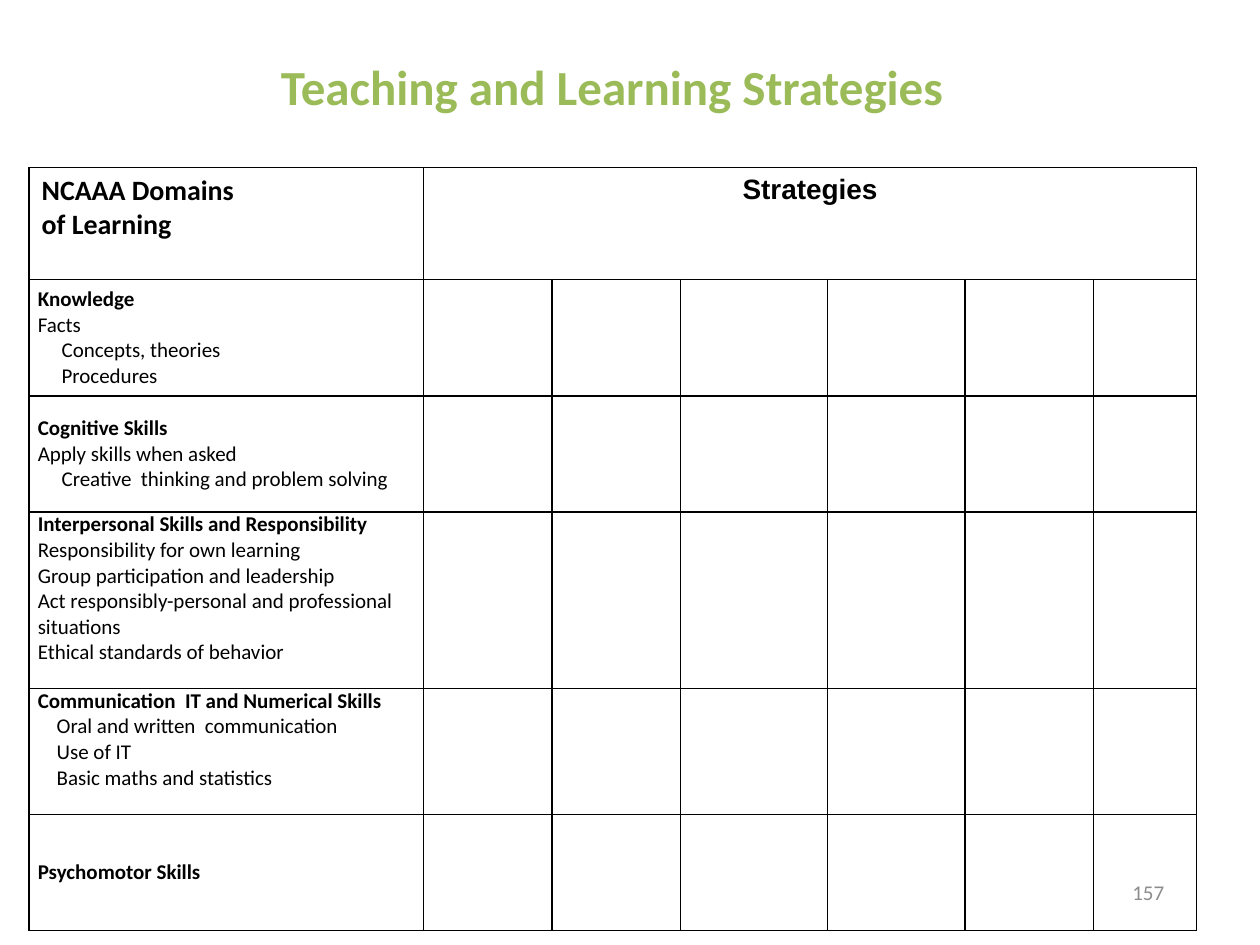
from lxml import etree
from pptx import Presentation
from pptx.dml.color import RGBColor
from pptx.enum import text as t
from pptx.oxml.ns import qn
from pptx.util import Pt

TITLE = "Teaching and Learning Strategies"
PAGE = "157"
HEADS = (["NCAAA Domains", "of Learning"], ["Strategies"])
TOP, MID = t.MSO_ANCHOR.TOP, t.MSO_ANCHOR.MIDDLE
ROWS = [
    ("Knowledge", MID, 66.4,
     [("Facts", 0), ("Concepts, theories", 13.6), ("Procedures", 13.6)]),
    ("Cognitive Skills", MID, 66.4,
     [("Apply skills when asked", 0),
      ("Creative  thinking and problem solving", 13.6)]),
    ("Interpersonal Skills and Responsibility", TOP, 100.8,
     [("Responsibility for own learning", 0),
      ("Group participation and leadership", 0),
      ("Act responsibly-personal and professional situations", 0),
      ("Ethical standards of behavior", 0)]),
    ("Communication  IT and Numerical Skills", TOP, 72,
     [("Oral and written  communication", 10.8), ("Use of IT", 10.8),
      ("Basic maths and statistics", 10.8)]),
    ("Psychomotor Skills", MID, 66.4, []),
]
HEAD = 64
COLS = [225.4, 73.4, 73.4, 84.2, 78.5, 73.4, 59]
THEME = {"green": "9BBB59", "black": "000000", "gray": "8C8C8C",
         "title": 28, "head": 16, "body": 12,
         "main": "Calibri", "alt": "Arial"}


def write(frame, lines, size="body", font="main", color="black", bold=False,
          align=t.PP_ALIGN.LEFT):
    for i, line in enumerate(lines):
        words, pad, heavy = line if isinstance(line, tuple) else (line, 0, bold)
        para = frame.paragraphs[0] if i == 0 else frame.add_paragraph()
        para.alignment = align
        if pad:
            para._p.get_or_add_pPr().set("marL", str(Pt(pad)))
        run = para.add_run()
        run.text = words
        run.font.size = Pt(THEME[size])
        run.font.name = THEME[font]
        run.font.bold = heavy
        run.font.color.rgb = RGBColor.from_string(THEME[color])


def label(slide, words, box, **style):
    frame = slide.shapes.add_textbox(*map(Pt, box)).text_frame
    frame.word_wrap = True
    frame.vertical_anchor = MID
    write(frame, [words], **style)


def border(cell):
    props = cell._tc.get_or_add_tcPr()
    for i, side in enumerate("LRTB"):
        line = etree.Element(qn("a:ln" + side), w=str(Pt(1)))
        fill = etree.SubElement(line, qn("a:solidFill"))
        etree.SubElement(fill, qn("a:srgbClr"), val=THEME["black"])
        props.insert(i, line)


def inset(cell, side, edge):
    cell.margin_left = cell.margin_right = Pt(side)
    cell.margin_top = cell.margin_bottom = Pt(edge)


def grid(slide):
    highs = [HEAD] + [row[2] for row in ROWS]
    box = (16.6, 95.8, sum(COLS), sum(highs))
    table = slide.shapes.add_table(len(highs), len(COLS), *map(Pt, box)).table
    table.first_row = table.horz_banding = False
    for col, wide in zip(table.columns, COLS):
        col.width = Pt(wide)
    for row, high in zip(table.rows, highs):
        row.height = Pt(high)
        for cell in row.cells:
            cell.fill.background()
            border(cell)
    left, right = table.cell(0, 0), table.cell(0, 1)
    right.merge(table.cell(0, len(COLS) - 1))
    for cell in (left, right):
        inset(cell, 7.2, 3.6)
    write(left.text_frame, HEADS[0], size="head", bold=True)
    write(right.text_frame, HEADS[1], size="head", font="alt", bold=True,
          align=t.PP_ALIGN.CENTER)
    for i, (name, anchor, _, items) in enumerate(ROWS, 1):
        cell = table.cell(i, 0)
        inset(cell, 5, 0)
        cell.vertical_anchor = anchor
        lines = [(name, 0, True)] + [(item, pad, False) for item, pad in items]
        write(cell.text_frame, lines)


def main():
    deck = Presentation()
    deck.slide_width, deck.slide_height = Pt(720), Pt(540)
    slide = deck.slides.add_slide(deck.slide_layouts[6])
    label(slide, TITLE, (59.8, 15.1, 579.6, 67.7), size="title",
          color="green", bold=True, align=t.PP_ALIGN.CENTER)
    grid(slide)
    label(slide, PAGE, (570.2, 491.8, 102.2, 36), color="gray",
          align=t.PP_ALIGN.RIGHT)
    deck.save("out.pptx")


if __name__ == "__main__":
    main()
